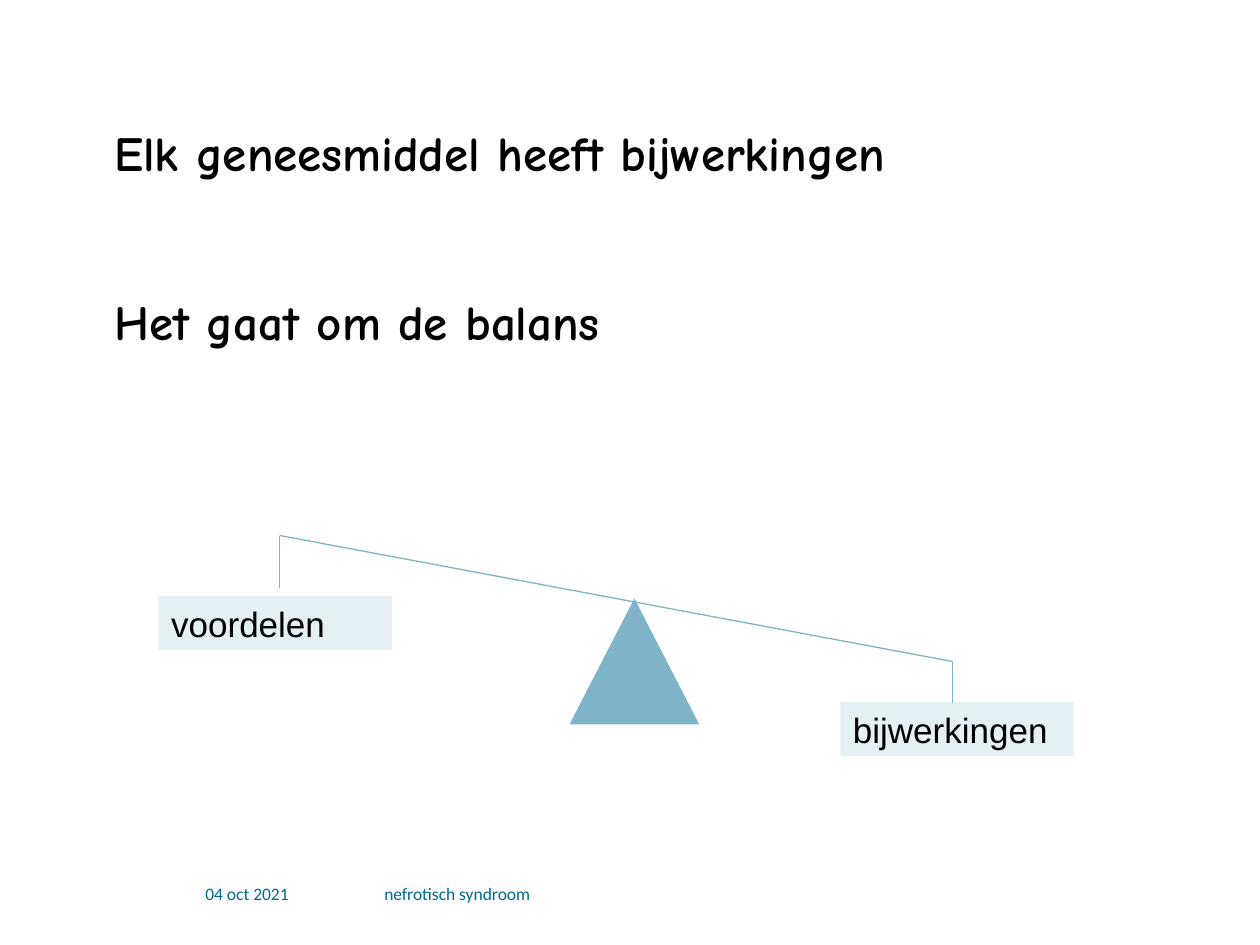
import pptx
import pptx.util
import pptx.dml.color
import pptx.enum.shapes
import pptx.enum.text
import pptx.oxml.ns
import lxml.etree

Inches = pptx.util.Inches
Pt = pptx.util.Pt
Shapes = pptx.enum.shapes.MSO_SHAPE

BLUE = "7FB4C8"
PALE = "E5F0F4"
BLACK = "000000"
TEAL = "006991"


def color(value):
    return pptx.dml.color.RGBColor.from_string(value)


def style_para(para, font, size, shade, bold=False):
    para.alignment = pptx.enum.text.PP_ALIGN.LEFT
    for span in para.runs:
        span.font.name = font
        span.font.size = Pt(size)
        span.font.bold = bold
        span.font.color.rgb = color(shade)


def add_solid(page, kind, left, top, width, height, fill):
    shape = page.shapes.add_shape(
        kind, Inches(left), Inches(top), Inches(width), Inches(height))
    shape.shadow.inherit = False
    shape.fill.solid()
    shape.fill.fore_color.rgb = color(fill)
    shape.line.fill.background()
    return shape


def add_line(page, start, end):
    line = page.shapes.add_connector(
        pptx.enum.shapes.MSO_CONNECTOR.STRAIGHT,
        *(Inches(value) for value in (*start, *end)))
    line.line.color.rgb = color(BLUE)
    line.line.width = Pt(0.75)
    properties = line._element.spPr
    lxml.etree.SubElement(properties, pptx.oxml.ns.qn("a:effectLst"))


def add_statements(page, left, top, width, height):
    box = page.shapes.add_textbox(
        Inches(left), Inches(top), Inches(width), Inches(height))
    frame = box.text_frame
    frame.word_wrap = True
    frame.text = "Elk geneesmiddel heeft bijwerkingen\nHet gaat om de balans"
    for para in frame.paragraphs:
        style_para(para, "Comic Neue", 28, BLACK, True)
    frame.paragraphs[1].space_before = Pt(63)


def add_pan(page, left, top, text):
    pan = add_solid(page, Shapes.RECTANGLE, left, top, 1.85, 0.43, PALE)
    frame = pan.text_frame
    frame.word_wrap = True
    frame.vertical_anchor = pptx.enum.text.MSO_ANCHOR.TOP
    frame.text = text
    style_para(frame.paragraphs[0], "Arial", 20, BLACK)


def add_balance(page, left, top, width, height):
    light_end = (left + 0.96, top)
    heavy_end = (left + width - 0.96, top + 1)
    add_solid(page, Shapes.ISOSCELES_TRIANGLE, left + 3.26, top + 0.5, 1.03, 1, BLUE)
    add_line(page, light_end, heavy_end)
    add_pan(page, left + width - 1.85, top + height - 0.43, "bijwerkingen")
    add_pan(page, left, top + 0.48, "voordelen")
    for (x, y), drop in ((light_end, 0.42), (heavy_end, 0.33)):
        add_line(page, (x, y), (x, y + drop))


def add_footer(page, left, top, width, height):
    entries = (("04 oct 2021", 0, 1.18),
               ("nefrotisch syndroom", 1.42, width - 1.42))
    for text, offset, span_width in entries:
        box = page.shapes.add_textbox(
            Inches(left + offset), Inches(top), Inches(span_width), Inches(height))
        frame = box.text_frame
        frame.word_wrap = True
        frame.vertical_anchor = pptx.enum.text.MSO_ANCHOR.MIDDLE
        frame.margin_left = frame.margin_right = 0
        frame.margin_top = frame.margin_bottom = 0
        frame.text = text
        para = frame.paragraphs[0]
        para.line_spacing = Pt(12)
        style_para(para, "Calibri", 10, TEAL)


def main():
    deck = pptx.Presentation()
    deck.slide_width = Inches(10)
    deck.slide_height = Inches(7.5)
    page = deck.slides.add_slide(deck.slide_layouts[6])
    add_statements(page, 0.81, 0.92, 8.44, 1.97)
    add_balance(page, 1.26, 4.25, 7.26, 1.75)
    add_footer(page, 1.63, 7.01, 5.75, 0.17)
    deck.save("out.pptx")


if __name__ == "__main__":
    main()
